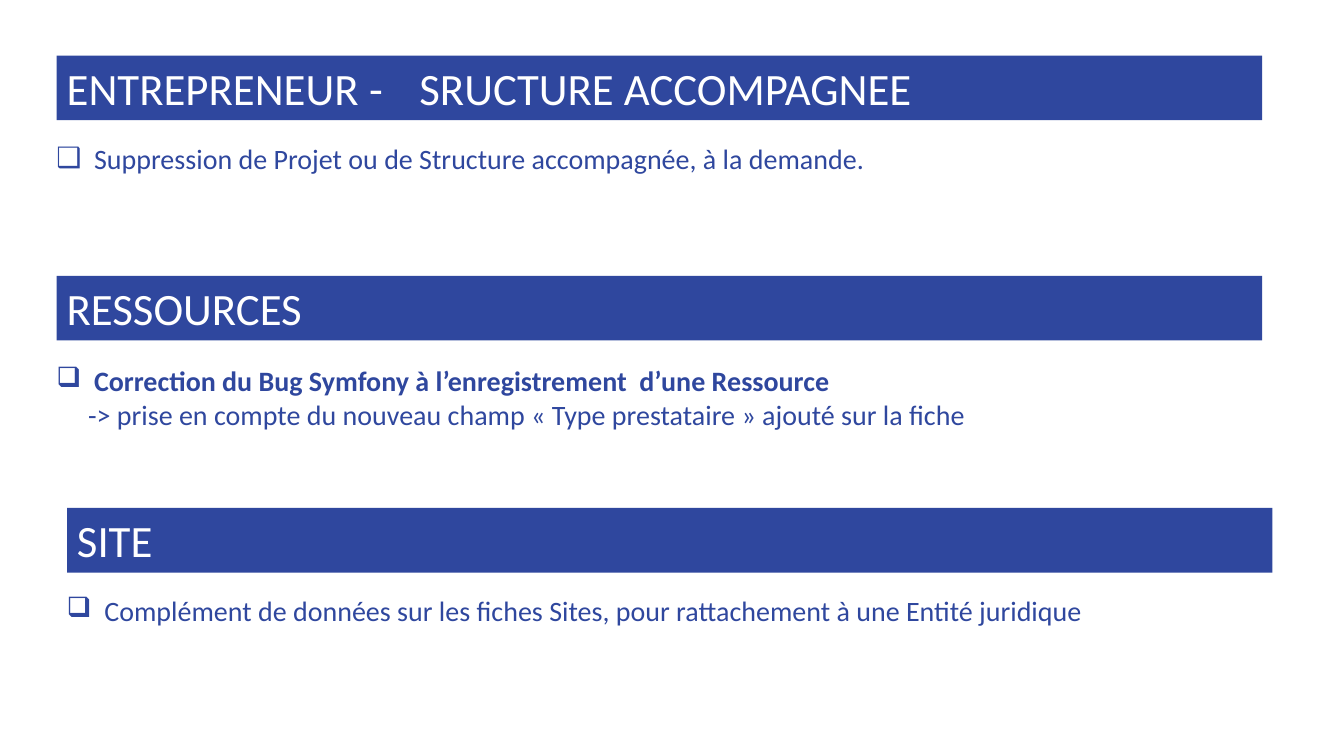
"""Build a slide with three headed sections of change notes."""
from lxml.etree import SubElement
from pptx import Presentation
from pptx.dml.color import RGBColor
from pptx.enum.text import MSO_ANCHOR as ANCHOR, MSO_AUTO_SIZE as AUTO, PP_ALIGN as ALIGN
from pptx.oxml.ns import qn
from pptx.util import Cm, Pt

COLORS = {"blue": "2F479E", "white": "FFFFFF"}
WIDTH, HEAD_H = 30.38, 1.63
HANG = 0.95


def add_text(tf, text, size, color, bold=False, bullet=None, left=0, tabs=()):
    p = tf.paragraphs[0] if not tf.text else tf.add_paragraph()
    p.alignment = ALIGN.LEFT
    p.line_spacing = 1.0
    p.space_before = p.space_after = Pt(0)
    r = p.add_run()
    r.text = text
    r.font.name, r.font.size, r.font.bold = "Calibri", Pt(size), bold
    r.font.color.rgb = RGBColor.from_string(COLORS[color])
    pPr = p._p.get_or_add_pPr()
    pPr.set("marL", str(Cm(left)))
    pPr.set("indent", str(Cm(-left if bullet else 0)))
    if bullet:
        SubElement(pPr, qn("a:buChar"), char=bullet)
    else:
        SubElement(pPr, qn("a:buNone"))
    if tabs:
        tab_list = SubElement(pPr, qn("a:tabLst"))
        for pos in tabs:
            SubElement(tab_list, qn("a:tab"), pos=str(Cm(pos)), algn="l")


def place(sp, x, y, h):
    sp.left, sp.top, sp.width, sp.height = Cm(x), Cm(y), Cm(WIDTH), Cm(h)
    tf = sp.text_frame
    tf.word_wrap = True
    tf.auto_size = AUTO.NONE
    tf.vertical_anchor = ANCHOR.TOP
    tf.margin_left = tf.margin_right = Cm(0.25)
    tf.margin_top = tf.margin_bottom = Cm(0.13)
    return tf


prs = Presentation()
prs.slide_width, prs.slide_height = Cm(33.87), Cm(19.05)
s = prs.slides.add_slide(prs.slide_layouts[1])

sections = [
    ("ENTREPRENEUR\t-\tSRUCTURE ACCOMPAGNEE", 1.43, 1.4, 1.17, 3.43, 1.12, False,
     "Suppression de Projet ou de Structure accompagnée, à la demande.", None),
    ("RESSOURCES", 1.43, 6.95, 1.17, 9.04, 1.96, True,
     "Correction du Bug Symfony à l’enregistrement  d’une Ressource",
     "-> prise en compte du nouveau champ « Type prestataire » ajouté sur la fiche"),
    ("SITE", 1.69, 12.8, 1.43, 14.83, 1.12, False,
     "Complément de données sur les fiches Sites, pour rattachement à une Entité juridique", None),
]

for i, (head, head_x, head_y, note_x, note_y, note_h, bold, note, detail) in enumerate(sections):
    if i == 0:
        bar, box = s.shapes.title, s.placeholders[1]
    else:
        bar, box = (s.shapes.add_textbox(0, 0, 0, 0) for _ in range(2))
    tf = place(bar, head_x, head_y, HEAD_H)
    bar.fill.solid()
    bar.fill.fore_color.rgb = RGBColor.from_string(COLORS["blue"])
    add_text(tf, head, 32, "white", tabs=(8.11, 9.22) if "\t" in head else ())

    tf = place(box, note_x, note_y, note_h)
    add_text(tf, note, 20, "blue", bold=bold, bullet="❑", left=HANG)
    if detail:
        add_text(tf, detail, 20, "blue", left=0.8)

prs.save("out.pptx")
